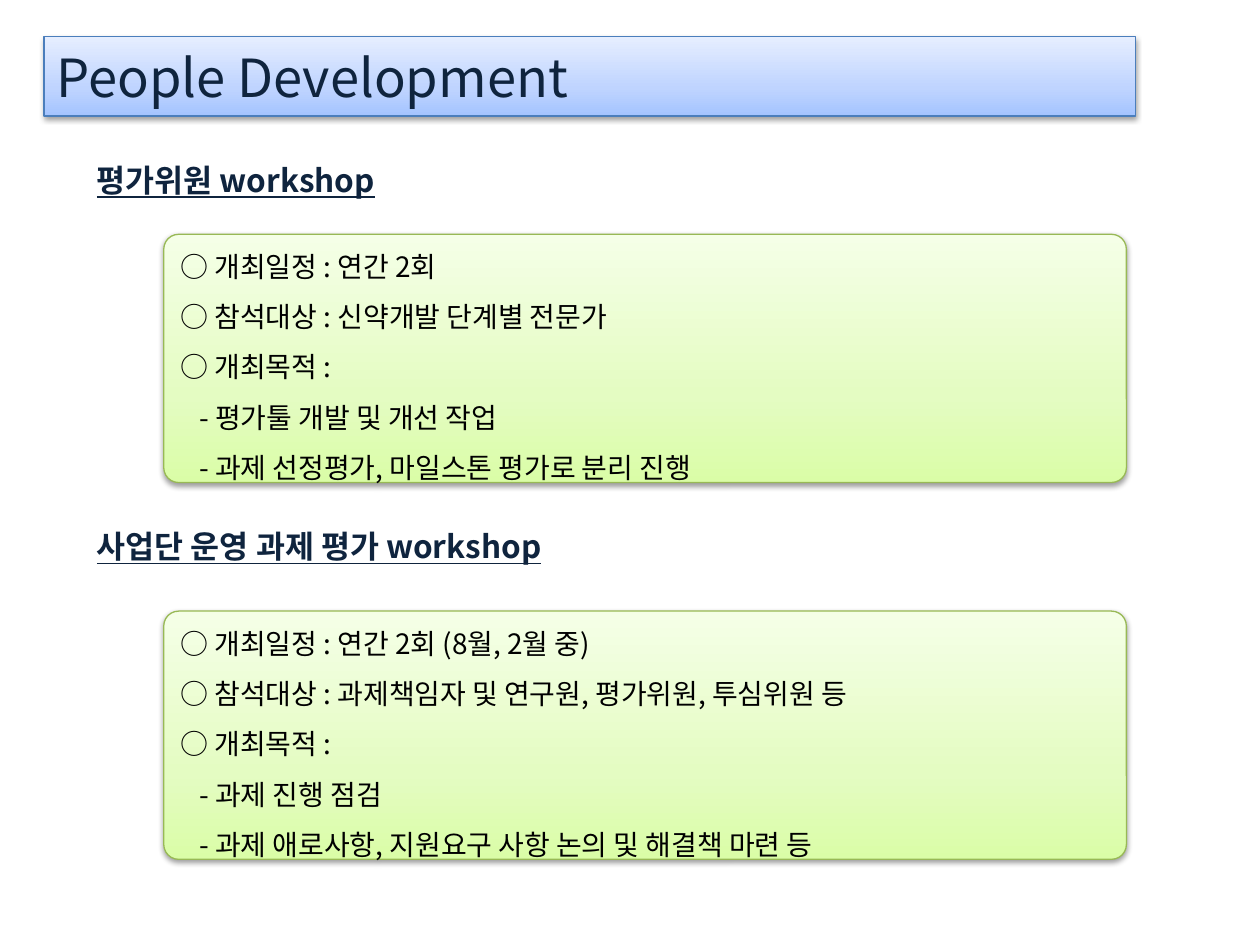
"""Build the People Development slide with two workshop sections."""
from dataclasses import dataclass
from typing import Any

from lxml.etree import SubElement
from pptx import Presentation
from pptx.dml.color import RGBColor
from pptx.enum.shapes import MSO_SHAPE
from pptx.enum.text import MSO_ANCHOR, MSO_AUTO_SIZE, PP_ALIGN
from pptx.oxml.ns import qn
from pptx.util import Inches, Pt

WIDE, HIGH = Inches(10), Inches(7.5)


@dataclass(frozen=True)
class Theme:
    font: str = "Noto Sans CJK KR"
    navy: str = "0F243E"
    black: str = "000000"
    blues: tuple = ("A4C4FF", "BFD4FF", "E6EEFF")
    greens: tuple = ("DAFDA7", "E4FCC2", "F5FFE7")
    stops: tuple = (0, 35, 100)
    blue_line: str = "4B7EBC"
    green_line: str = "98B955"
    title: float = 30
    head: float = 18
    body: float = 16


@dataclass(frozen=True)
class Area:
    left: float
    top: float
    width: float
    height: float


@dataclass(frozen=True)
class Section:
    head: str
    head_area: Area
    card_area: Area
    items: tuple
    goals: tuple


THEME = Theme()
TITLE = Area(3.5, 3.87, 86.6, 8.4)
SECTIONS = (
    Section("평가위원 workshop", Area(6.7, 16.4, 62.2, 5.2), Area(13, 24.8, 76.4, 26.27),
            ("개최일정 : 연간 2회", "참석대상 : 신약개발 단계별 전문가", "개최목적 :"),
            ("평가툴 개발 및 개선 작업", "과제 선정평가, 마일스톤 평가로 분리 진행")),
    Section("사업단 운영 과제 평가 workshop", Area(6.7, 55.2, 89.8, 5.2), Area(13, 64.67, 76.4, 26.27),
            ("개최일정 : 연간 2회 (8월, 2월 중)", "참석대상 : 과제책임자 및 연구원, 평가위원, 투심위원 등", "개최목적 :"),
            ("과제 진행 점검", "과제 애로사항, 지원요구 사항 논의 및 해결책 마련 등")),
)


def apply(item: Any, values: dict) -> None:
    for name, value in values.items():
        setattr(item, name, value)


def place(area: Area) -> dict:
    return {"left": int(WIDE * area.left / 100), "top": int(HIGH * area.top / 100),
            "width": int(WIDE * area.width / 100), "height": int(HIGH * area.height / 100)}


def paint(shape: Any, tones: tuple, edge: str) -> None:
    shape.fill.gradient()
    shape.fill.gradient_angle = 90
    stops = shape.fill.gradient_stops
    ramp = shape.element.spPr.find(qn("a:gradFill")).find(qn("a:gsLst"))
    for stop in list(ramp):
        ramp.remove(stop)
    for spot, tone in zip(THEME.stops, tones):
        stop = SubElement(ramp, qn("a:gs"), pos=str(spot * 1000))
        SubElement(stop, qn("a:srgbClr"), val=tone)
    shape.line.color.rgb = RGBColor.from_string(edge)
    shape.line.width = Pt(0.75)
    shape.shadow.inherit = False
    glow = SubElement(shape.element.spPr.find(qn("a:effectLst")), qn("a:outerShdw"),
                      blurRad=str(Pt(3.1)), dist=str(Pt(1.6)), dir="5400000", rotWithShape="0")
    tone = SubElement(glow, qn("a:srgbClr"), val=THEME.black)
    SubElement(tone, qn("a:alpha"), val="38000")


def write(shape: Any, lines: list, size: float, tone: str, space: float = 1.0, **style: bool) -> None:
    frame = shape.text_frame
    apply(frame, {"word_wrap": True, "auto_size": MSO_AUTO_SIZE.NONE,
                  "vertical_anchor": MSO_ANCHOR.MIDDLE,
                  "margin_left": Inches(0.1), "margin_right": Inches(0.1),
                  "margin_top": Inches(0.05), "margin_bottom": Inches(0.05)})
    for place_no, (text, inset) in enumerate(lines):
        para = frame.add_paragraph() if place_no else frame.paragraphs[0]
        apply(para, {"alignment": PP_ALIGN.LEFT, "line_spacing": space})
        if inset:
            para._p.get_or_add_pPr().set("marL", str(Inches(inset)))
        run = para.add_run()
        run.text = text
        apply(run.font, {"size": Pt(size), "name": THEME.font, **style})
        run.font.color.rgb = RGBColor.from_string(tone)
        SubElement(run.font._element, qn("a:ea"), typeface=THEME.font)


def draw(slide: Any, part: Section) -> None:
    head = slide.shapes.add_textbox(**place(part.head_area))
    write(head, [(part.head, 0)], THEME.head, THEME.navy, bold=True, underline=True)
    card = slide.shapes.add_shape(MSO_SHAPE.ROUNDED_RECTANGLE, *place(part.card_area).values())
    card.adjustments[0] = 0.06
    paint(card, THEME.greens, THEME.green_line)
    lines = [(f"○ {text}", 0) for text in part.items] + [(f"- {text}", 0.15) for text in part.goals]
    write(card, lines, THEME.body, THEME.black, space=1.5)


def main() -> None:
    deck = Presentation()
    apply(deck, {"slide_width": WIDE, "slide_height": HIGH})
    slide = deck.slides.add_slide(deck.slide_layouts[5])
    title = slide.shapes.title
    apply(title, place(TITLE))
    paint(title, THEME.blues, THEME.blue_line)
    write(title, [("People Development", 0)], THEME.title, THEME.navy)
    for part in SECTIONS:
        draw(slide, part)
    deck.save("out.pptx")


if __name__ == "__main__":
    main()
